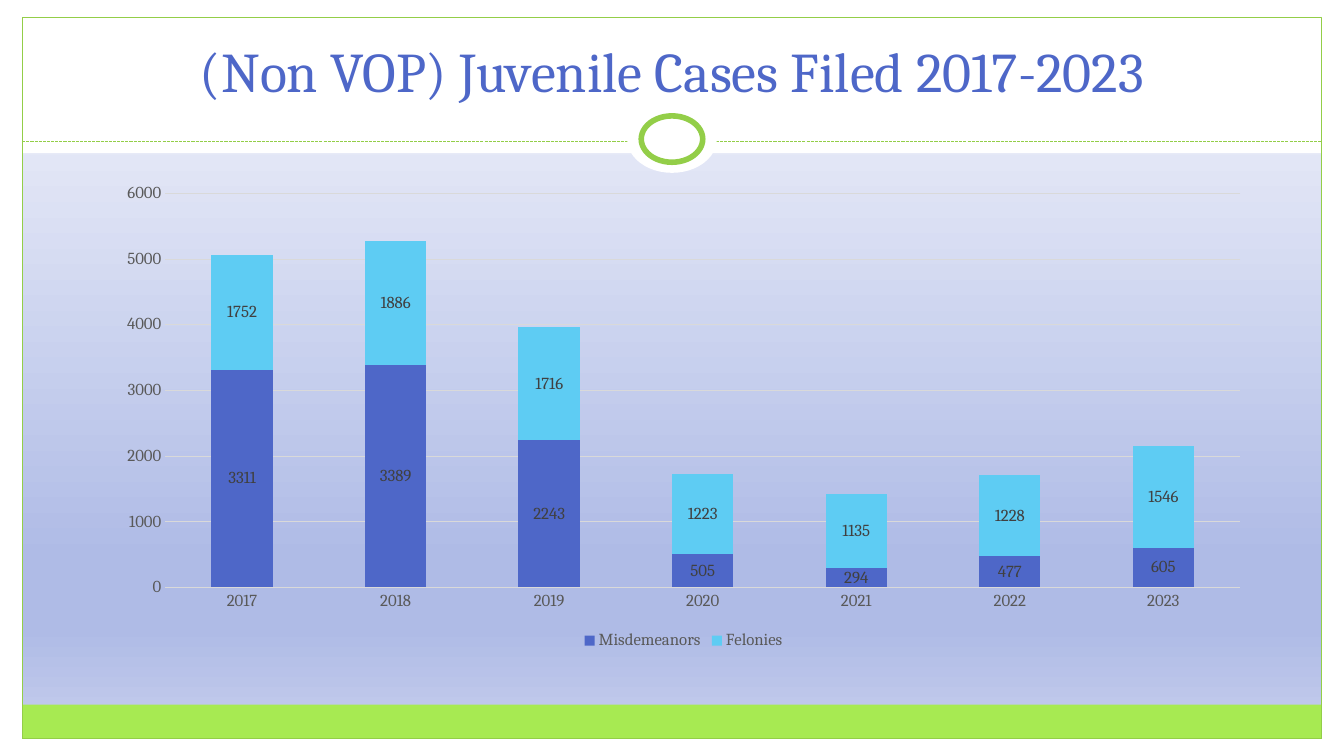
from pptx import Presentation, util as u
from pptx.chart.data import CategoryChartData
from pptx.dml.color import RGBColor
from pptx.enum import chart as ch, dml, shapes, text
from pptx.oxml import parse_xml
from pptx.oxml.ns import nsdecls, qn

WIDE, HIGH = 13.33, 7.5
EDGE, TOP = 0.22, 0.17      # page margins
BAND, RULE = 1.52, 1.4      # header height, dashed line
FOOT = 0.34                 # green strip
FONT = "Cambria"
WHITE, LIME, GREEN = "FFFFFF", "A7EA52", "93CE48"
BLUE, SKY, GRAY, DARK, PALE = "4E67C8", "5ECCF3", "595959", "404040", "D9D9D9"

YEARS = [str(year) for year in range(2017, 2024)]
CASES = [
    ("Misdemeanors", BLUE, (3311, 3389, 2243, 505, 294, 477, 605)),
    ("Felonies", SKY, (1752, 1886, 1716, 1223, 1135, 1228, 1546)),
]


def tint(color, code):
    color.rgb = RGBColor.from_string(code)


def box(*sizes):
    return [u.Inches(size) for size in sizes]


def style(font, size, code):
    font.name, font.size = FONT, u.Pt(size)
    tint(font.color, code)


def stroke(line, code, width=0.75):
    line.width = u.Pt(width)
    line.fill.solid()
    tint(line.color, code)


def shade(slide, stops):
    """Fill the background with a top-to-bottom gradient."""
    slide.background.fill.gradient()
    old = slide.element.find(".//" + qn("a:gradFill"))
    marks = "".join(
        f'<a:gs pos="{pos * 1000}"><a:srgbClr val="{code}"/></a:gs>'
        for pos, code in stops)
    new = parse_xml(
        f'<a:gradFill {nsdecls("a")} rotWithShape="1"><a:gsLst>{marks}</a:gsLst>'
        '<a:lin ang="5400000" scaled="0"/></a:gradFill>')
    old.getparent().replace(old, new)


def block(slide, area, fill=None, line=None, width=0.75, kind="RECTANGLE"):
    shape = slide.shapes.add_shape(shapes.MSO_SHAPE[kind], *box(*area))
    shape.shadow.inherit = False
    if fill:
        shape.fill.solid()
        tint(shape.fill.fore_color, fill)
    else:
        shape.fill.background()
    if line:
        stroke(shape.line, line, width)
    else:
        shape.line.fill.background()


def ring(slide, mid, wide, high, line=None):
    area = (WIDE / 2 - wide / 2, mid - high / 2, wide, high)
    block(slide, area, WHITE, line, 4, "OVAL")


def rule(slide, y):
    line = slide.shapes.add_connector(
        shapes.MSO_CONNECTOR.STRAIGHT, *box(EDGE, y, WIDE - EDGE, y))
    stroke(line.line, GREEN)
    line.line.dash_style = dml.MSO_LINE.SQUARE_DOT
    line.element.spPr.append(parse_xml(f'<a:effectLst {nsdecls("a")}/>'))


def head(slide, words):
    title = slide.shapes.title
    title.left, title.top, title.width, title.height = box(
        2 * EDGE, 0.25, WIDE - 4 * EDGE, 0.83)
    title.text = words
    frame = title.text_frame
    frame.vertical_anchor = text.MSO_ANCHOR.BOTTOM
    para = frame.paragraphs[0]
    para.alignment = text.PP_ALIGN.CENTER
    style(para.font, 40, BLUE)
    # Bring the title in front of the header band
    slide.shapes.element.append(title.element)


def columns(slide, area):
    data = CategoryChartData()
    data.categories = YEARS
    for name, code, counts in CASES:
        data.add_series(name, counts)
    chart = slide.shapes.add_chart(
        ch.XL_CHART_TYPE.COLUMN_STACKED, *box(*area), data).chart
    style(chart.font, 10, "000000")
    chart.has_title = False

    # Legend
    chart.has_legend = True
    chart.legend.position = ch.XL_LEGEND_POSITION.BOTTOM
    chart.legend.include_in_layout = False
    style(chart.legend.font, 12, GRAY)

    # Axes
    for axis in (chart.category_axis, chart.value_axis):
        axis.major_tick_mark = axis.minor_tick_mark = ch.XL_TICK_MARK.NONE
        style(axis.tick_labels.font, 12, GRAY)
    stroke(chart.category_axis.format.line, PALE)
    scale = chart.value_axis
    scale.minimum_scale, scale.maximum_scale, scale.major_unit = 0, 6000, 1000
    scale.format.line.fill.background()
    stroke(scale.major_gridlines.format.line, PALE)

    # Columns
    plot = chart.plots[0]
    plot.gap_width, plot.overlap = 150, 100
    plot.vary_by_categories = False
    for series, (name, code, counts) in zip(plot.series, CASES):
        series.format.fill.solid()
        tint(series.format.fill.fore_color, code)
        labels = series.data_labels
        labels.show_value = True
        labels.position = ch.XL_LABEL_POSITION.CENTER
        style(labels.font, 12, DARK)


def main():
    deck = Presentation()
    deck.slide_width, deck.slide_height = box(WIDE, HIGH)
    slide = deck.slides.add_slide(deck.slide_layouts[5])
    shade(slide, [(0, "F6F7FC"), (74, "AFBBE6"), (83, "AFBBE6"), (100, "CAD1EE")])

    # White margins and header
    for area in ((0, HIGH - TOP, WIDE, TOP), (0, 0, WIDE, BAND),
                 (0, 0, EDGE, HIGH), (WIDE - EDGE, 0, EDGE, HIGH)):
        block(slide, area, WHITE)

    # Green strip, frame and dashed line
    inner = WIDE - 2 * EDGE
    block(slide, (EDGE, HIGH - TOP - FOOT, inner, FOOT), LIME)
    block(slide, (EDGE, TOP, inner, HIGH - 2 * TOP), line=GREEN)
    rule(slide, RULE)

    # Ring on the dashed line
    ring(slide, 1.38, 0.89, 0.67)
    ring(slide, 1.38, 0.61, 0.46, GREEN)

    head(slide, "(Non VOP) Juvenile Cases Filed 2017-2023")
    columns(slide, (1.03, 1.73, 11.5, 4.76))
    deck.save("out.pptx")


if __name__ == "__main__":
    main()
